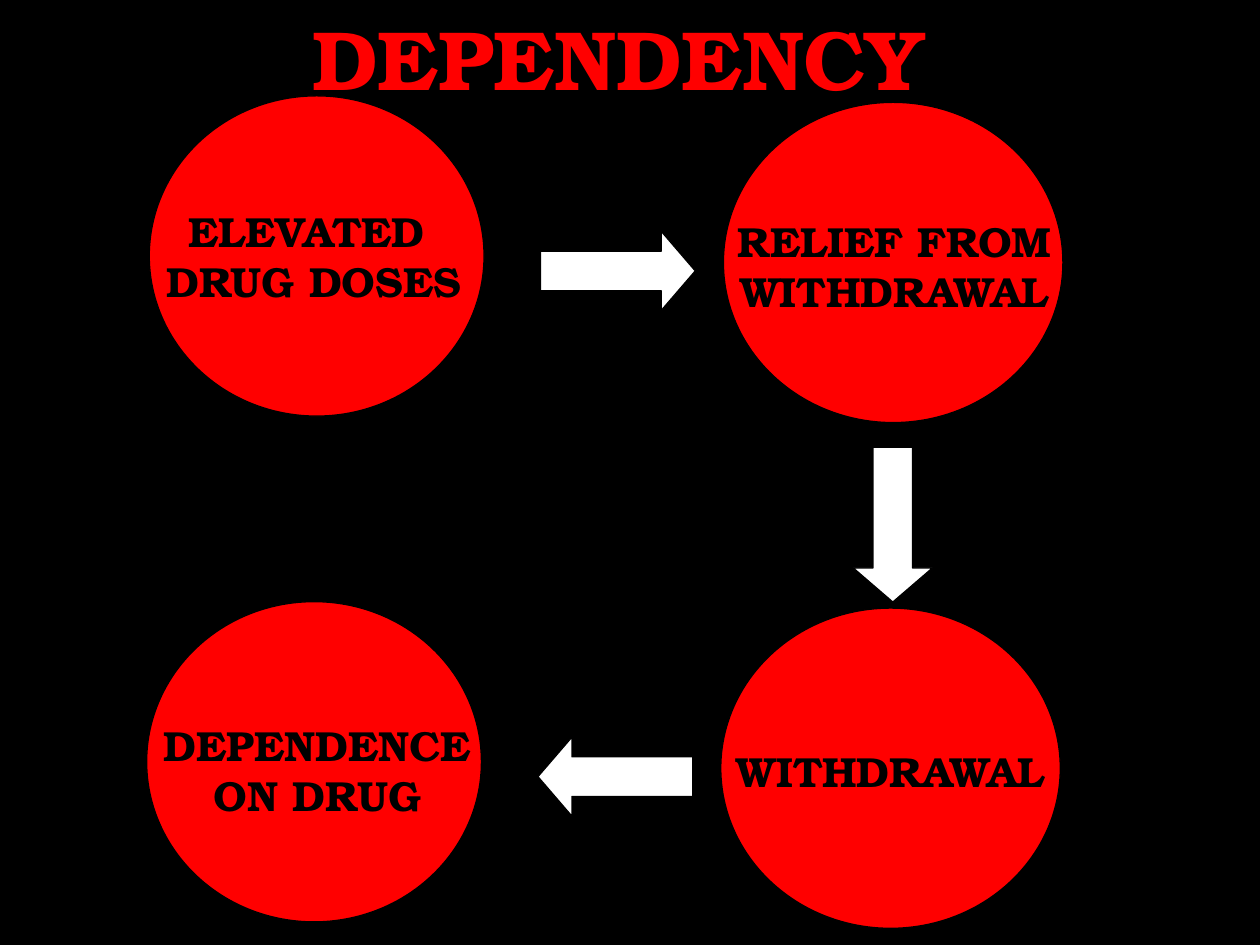
from pptx import Presentation, util as u
from pptx.dml.color import RGBColor
from pptx.enum import shapes, text

COLORS = {"ground": "000000", "accent": "FF0000", "arrow": "FFFFFF", "label": "000000"}


class CycleSlide:
    font = "TeX Gyre Bonum"

    def __init__(self, deck):
        self.slide = deck.slides.add_slide(deck.slide_layouts[5])
        self.paint(self.slide.background.fill, "ground")

    def paint(self, fill, color):
        fill.solid()
        fill.fore_color.rgb = RGBColor.from_string(COLORS[color])

    def set_lines(self, frame, lines, size, color):
        frame.word_wrap = True
        frame.auto_size = text.MSO_AUTO_SIZE.NONE
        frame.text = "\n".join(lines)
        for paragraph in frame.paragraphs:
            paragraph.alignment = text.PP_ALIGN.CENTER
            paragraph.font.name = self.font
            paragraph.font.size = u.Pt(size)
            paragraph.font.bold = True
            paragraph.font.color.rgb = RGBColor.from_string(COLORS[color])

    def title(self, wording, left, top, width, height):
        heading = self.slide.shapes.title
        heading.left, heading.top = u.Pt(left), u.Pt(top)
        heading.width, heading.height = u.Pt(width), u.Pt(height)
        heading.text_frame.vertical_anchor = text.MSO_ANCHOR.MIDDLE
        self.set_lines(heading.text_frame, [wording], 48, "accent")

    def solid(self, kind, color, left, top, width, height):
        figure = self.slide.shapes.add_shape(
            kind, u.Pt(left), u.Pt(top), u.Pt(width), u.Pt(height))
        figure.shadow.inherit = False
        self.paint(figure.fill, color)
        self.paint(figure.line.fill, "ground")
        figure.line.width = u.Pt(0.75)
        return figure

    def circle(self, left, top, width):
        self.solid(shapes.MSO_SHAPE.OVAL, "accent", left, top, width, 183)

    def arrow(self, left, top, rotation):
        step = self.solid(shapes.MSO_SHAPE.DOWN_ARROW, "arrow", left, top, 45.2, 88.4)
        step.adjustments[0], step.adjustments[1] = 0.5, 0.43
        step.rotation = rotation

    def label(self, lines, left, top, width, height):
        box = self.slide.shapes.add_textbox(
            u.Pt(left), u.Pt(top), u.Pt(width), u.Pt(height))
        self.set_lines(box.text_frame, lines, 24, "label")


def main():
    deck = Presentation()
    deck.slide_width, deck.slide_height = u.Pt(720), u.Pt(540)
    cycle = CycleSlide(deck)
    cycle.title("DEPENDENCY", 169.2, 0, 368.6, 65.5)

    for row_left, row_top in ((0, 0), (-1.5, 289)):
        cycle.circle(85.3 + row_left, 54.8 + row_top, 191.3)
        cycle.circle(413.4 + row_left, 58.5 + row_top, 194)

    for left, top, rotation in ((330.5, 110.6, 270), (487.6, 255.6, 0), (329, 399.6, 90)):
        cycle.arrow(left, top, rotation)

    cycle.label(["ELEVATED ", "DRUG DOSES"], 83.5, 113.8, 191.5, 72)
    cycle.label(["RELIEF FROM WITHDRAWAL"], 414, 119.5, 194.4, 60)
    cycle.label(["WITHDRAWAL"], 410.4, 422.6, 197.3, 42)
    cycle.label(["DEPENDENCE ", "ON DRUG"], 86.4, 407.5, 190, 61)
    deck.save("out.pptx")


if __name__ == "__main__":
    main()
